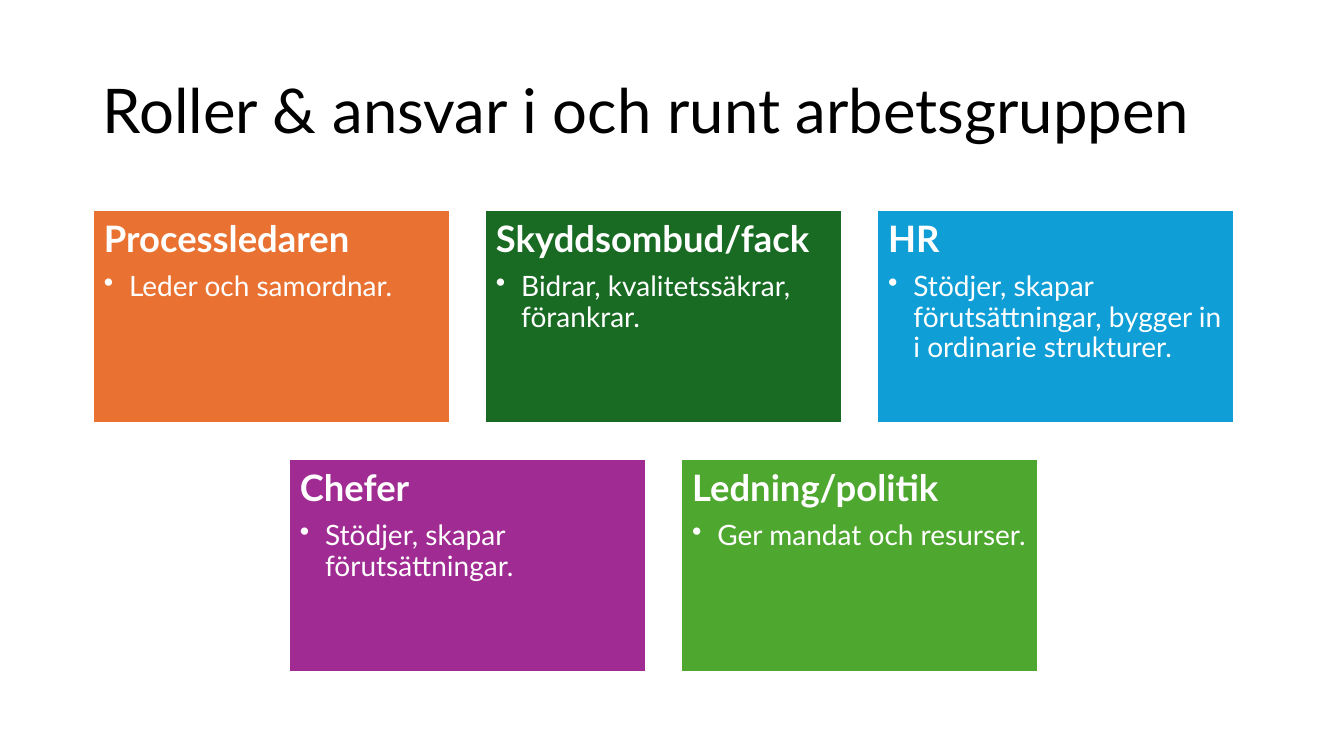
from lxml import etree
from pptx import Presentation
from pptx.dml.color import RGBColor
from pptx.enum.shapes import MSO_SHAPE
from pptx.enum.text import MSO_ANCHOR, MSO_AUTO_SIZE, PP_ALIGN
from pptx.oxml.ns import qn
from pptx.util import Inches, Pt

FONT = "Lato"
COLORS = {
    "title": "000000",
    "white": "FFFFFF",
    "orange": "E97132",
    "dark_green": "196B24",
    "blue": "0F9ED5",
    "purple": "A02B93",
    "green": "4EA72E",
}
CARD_WIDTH, CARD_HEIGHT, CARD_GAP = 3.54, 2.12, 0.35
ROLE_ROWS = [
    [
        ("Processledaren", "Leder och samordnar.", "orange"),
        ("Skyddsombud/fack", "Bidrar, kvalitetssäkrar, förankrar.", "dark_green"),
        ("HR", "Stödjer, skapar förutsättningar, bygger in i ordinarie strukturer.", "blue"),
    ],
    [
        ("Chefer", "Stödjer, skapar förutsättningar.", "purple"),
        ("Ledning/politik", "Ger mandat och resurser.", "green"),
    ],
]


def color(name):
    return RGBColor.from_string(COLORS[name])


def format_paragraph(paragraph, size, color_name, bold=False, space_after=0):
    paragraph.alignment = PP_ALIGN.LEFT
    paragraph.line_spacing = 0.9
    paragraph.space_before = Pt(0)
    paragraph.space_after = Pt(space_after)
    for run in paragraph.runs:
        run.font.name = FONT
        run.font.size = Pt(size)
        run.font.bold = bold
        run.font.color.rgb = color(color_name)


def add_bullet(paragraph):
    properties = paragraph._p.get_or_add_pPr()
    properties.set("marL", str(Inches(0.25)))
    properties.set("indent", str(Inches(-0.25)))
    etree.SubElement(properties, qn("a:buChar")).set("char", "•")


def place_title(slide, text, left, top, width, height):
    title = slide.shapes.title
    title.left, title.top = Inches(left), Inches(top)
    title.width, title.height = Inches(width), Inches(height)
    text_frame = title.text_frame
    text_frame.text = text
    text_frame.word_wrap = True
    text_frame.auto_size = MSO_AUTO_SIZE.NONE
    text_frame.vertical_anchor = MSO_ANCHOR.MIDDLE
    format_paragraph(text_frame.paragraphs[0], 44, "title")


def add_role_card(slide, role, left, top):
    heading_text, duty_text, fill_name = role
    card = slide.shapes.add_shape(
        MSO_SHAPE.RECTANGLE,
        Inches(left), Inches(top), Inches(CARD_WIDTH), Inches(CARD_HEIGHT),
    )
    card.shadow.inherit = False
    card.fill.solid()
    card.fill.fore_color.rgb = color(fill_name)
    card.line.color.rgb = color("white")
    card.line.width = Pt(1.5)

    text_frame = card.text_frame
    text_frame.word_wrap = True
    text_frame.vertical_anchor = MSO_ANCHOR.TOP
    text_frame.margin_left = text_frame.margin_top = Inches(0.11)
    text_frame.margin_right = text_frame.margin_bottom = Inches(0.1)
    heading = text_frame.paragraphs[0]
    heading.text = heading_text
    format_paragraph(heading, 26, "white", bold=True, space_after=9)
    duty = text_frame.add_paragraph()
    duty.text = duty_text
    duty.level = 1
    format_paragraph(duty, 20, "white", space_after=3)
    add_bullet(duty)


def add_role_grid(slide, left, top, width):
    for row_index, roles in enumerate(ROLE_ROWS):
        row_width = len(roles) * (CARD_WIDTH + CARD_GAP) - CARD_GAP
        row_left = left + (width - row_width) / 2
        row_top = top + row_index * (CARD_HEIGHT + CARD_GAP)
        for column, role in enumerate(roles):
            add_role_card(slide, role, row_left + column * (CARD_WIDTH + CARD_GAP), row_top)


def main():
    presentation = Presentation()
    presentation.slide_width = Inches(13.33)
    presentation.slide_height = Inches(7.5)
    slide = presentation.slides.add_slide(presentation.slide_layouts.get_by_name("Title Only"))
    place_title(slide, "Roller & ansvar i och runt arbetsgruppen", 0.92, 0.4, 11.5, 1.45)
    add_role_grid(slide, 0.92, 2.08, 11.32)
    presentation.save("out.pptx")


if __name__ == "__main__":
    main()
